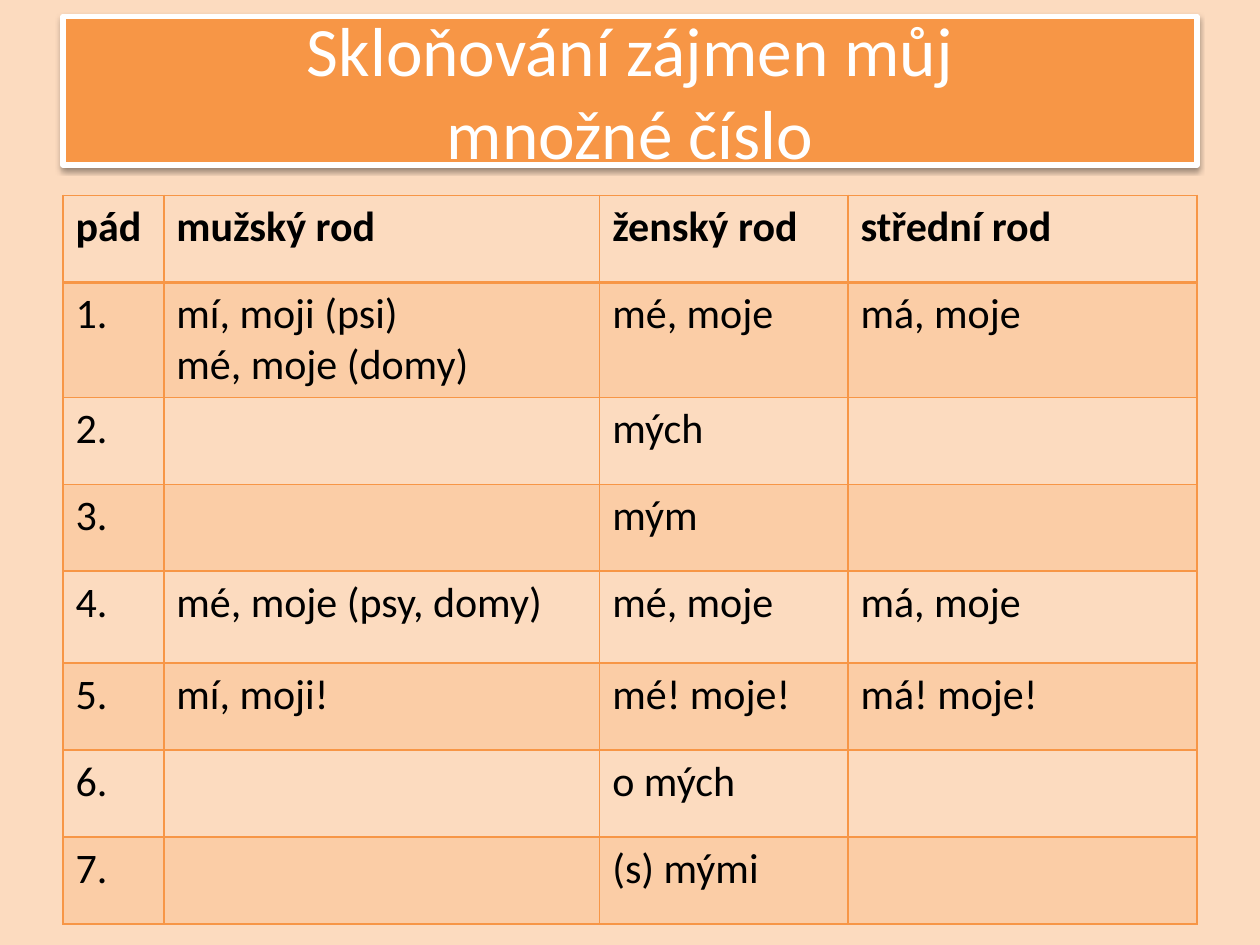
from lxml.etree import SubElement as Sub
from pptx import Presentation
from pptx.dml.color import RGBColor
from pptx.enum.text import MSO_ANCHOR as Anchor, MSO_AUTO_SIZE as Auto, PP_ALIGN as Align
from pptx.oxml import parse_xml
from pptx.oxml.ns import nsdecls, qn
from pptx.util import Inches, Pt

ORANGE = RGBColor(0xF7, 0x96, 0x46)
PEACH = RGBColor(0xFA, 0xC0, 0x90)
WHITE = RGBColor(0xFF, 0xFF, 0xFF)
BLACK = RGBColor(0, 0, 0)

COLS = [0.8, 3.46, 1.97, 2.77]
ROWS = [0.69] * 4 + [0.73] + [0.69] * 3
CASES = [
    ["pád", "mužský rod", "ženský rod", "střední rod"],
    ["1.", "mí, moji (psi)\nmé, moje (domy)", "mé, moje", "má, moje"],
    ["2.", "", "mých", ""],
    ["3.", "", "mým", ""],
    ["4.", "mé, moje (psy, domy)", "mé, moje", "má, moje"],
    ["5.", "mí, moji!", "mé! moje!", "má! moje!"],
    ["6.", "", "o mých", ""],
    ["7.", "", "(s) mými", ""],
]


def write(frame, text, size=24, color=BLACK, bold=False, align=Align.LEFT):
    """Fill a text frame with text in one format."""
    frame.text = text
    for para in frame.paragraphs:
        para.alignment = align
        for run in para.runs:
            run.font.name = "Calibri"
            run.font.size = Pt(size)
            run.font.bold = bold
            run.font.color.rgb = color


def tint(fill, node, color, alpha):
    """Give a fill a colour and an opacity in percent."""
    fill.solid()
    fill.fore_color.rgb = color
    tone = node.xpath(".//a:solidFill/a:srgbClr")[-1]
    Sub(tone, qn("a:alpha")).set("val", str(alpha * 1000))


def edge(cell, side, width):
    """Draw one border of a cell."""
    cell._tc.get_or_add_tcPr().append(parse_xml(
        f'<a:ln{side} {nsdecls("a")} w="{Pt(width)}"><a:solidFill>'
        f'<a:srgbClr val="{ORANGE}"/></a:solidFill></a:ln{side}>'))


def shade(shape):
    """Add a soft shadow below a shape."""
    shape.element.spPr.append(parse_xml(
        f'<a:effectLst {nsdecls("a")}><a:outerShdw blurRad="{Pt(3.1)}" '
        f'dist="{Pt(1.6)}" dir="5400000" rotWithShape="0">'
        '<a:srgbClr val="000000"><a:alpha val="38000"/></a:srgbClr>'
        '</a:outerShdw></a:effectLst>'))


def head(slide, x, y, w, h):
    """Place the title banner."""
    title = slide.shapes.title
    title.left, title.top, title.width, title.height = map(Inches, (x, y, w, h))
    title.fill.solid()
    title.fill.fore_color.rgb = ORANGE
    title.line.color.rgb = WHITE
    title.line.width = Pt(3)
    shade(title)
    frame = title.text_frame
    frame.word_wrap = True
    frame.auto_size = Auto.NONE
    frame.vertical_anchor = Anchor.MIDDLE
    write(frame, "Skloňování zájmen můj\vmnožné číslo",
          size=39.6, color=WHITE, align=Align.CENTER)


def grid(slide, x, y, w, h):
    """Place the table of cases and genders."""
    table = slide.shapes.add_table(
        len(ROWS), len(COLS), *map(Inches, (x, y, w, h))).table
    table.horz_banding = table.first_row = False
    for col, width in zip(table.columns, COLS):
        col.width = Inches(width)
    for i, (row, tall) in enumerate(zip(table.rows, ROWS)):
        row.height = Inches(tall)
        for cell, text in zip(row.cells, CASES[i]):
            write(cell.text_frame, text, bold=i == 0)
            for side in "LR":
                edge(cell, side, 1)
            edge(cell, "T", 2 if i == 1 else 1)
            edge(cell, "B", 2 if i == 0 else 1)
            if i % 2:
                tint(cell.fill, cell._tc.tcPr, ORANGE, 20)
            else:
                cell.fill.background()


def main():
    """Build and save the slide."""
    deck = Presentation()
    deck.slide_width, deck.slide_height = Inches(10), Inches(7.5)
    slide = deck.slides.add_slide(deck.slide_layouts[5])
    tint(slide.background.fill, slide.element, PEACH, 57)
    head(slide, 0.5, 0.13, 9, 1.18)
    grid(slide, 0.5, 1.55, sum(COLS), sum(ROWS))
    deck.save("out.pptx")


if __name__ == "__main__":
    main()
